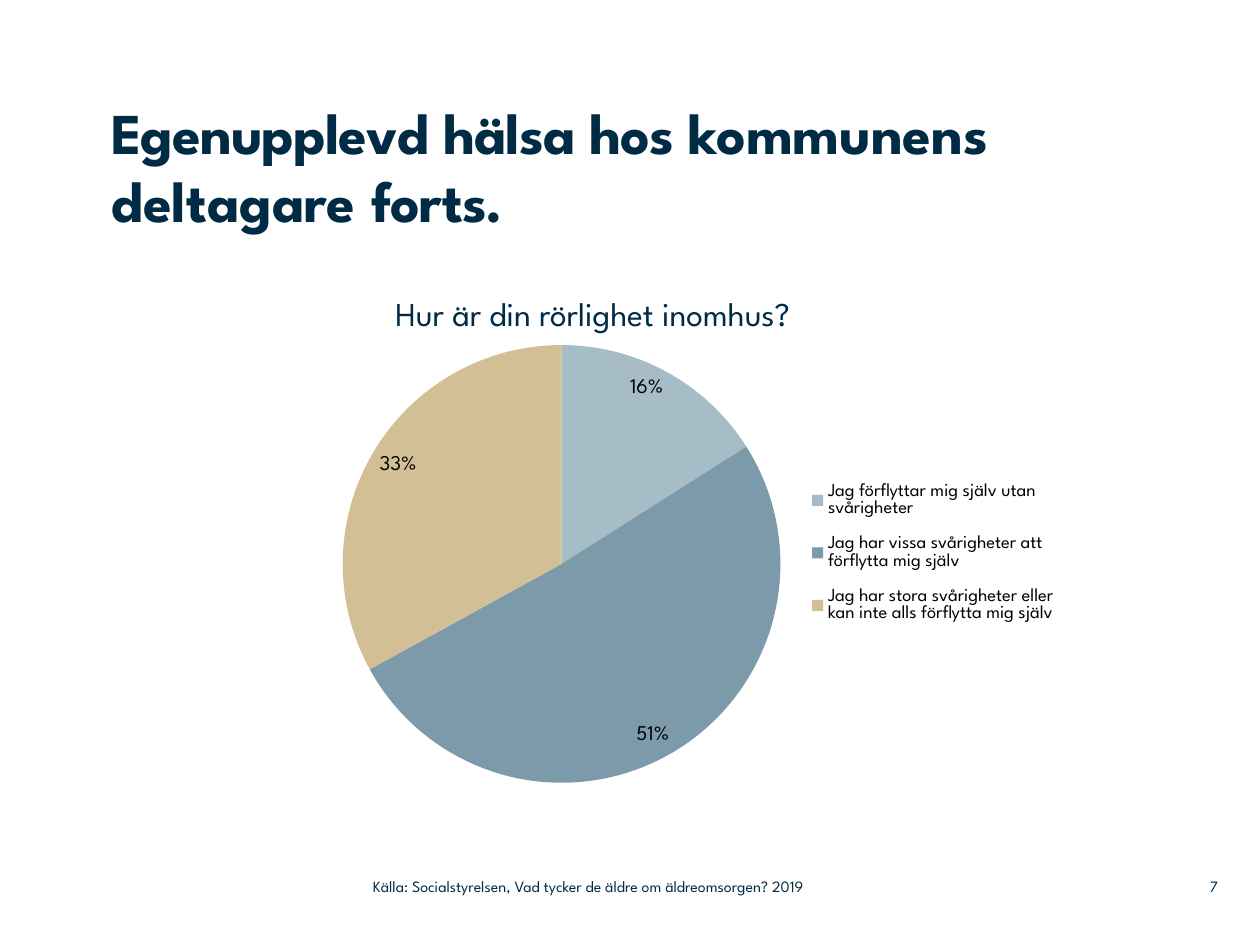
from dataclasses import dataclass

from lxml.etree import SubElement
from pptx import Presentation
from pptx.chart.data import CategoryChartData
from pptx.dml.color import RGBColor
from pptx.enum.chart import XL_CHART_TYPE, XL_LABEL_POSITION, XL_LEGEND_POSITION
from pptx.enum.text import MSO_ANCHOR, MSO_AUTO_SIZE, PP_ALIGN
from pptx.oxml.ns import qn
from pptx.util import Emu, Pt

FONT = "League Spartan"
NAVY = RGBColor(0x00, 0x2B, 0x45)
BLACK = RGBColor(0x00, 0x00, 0x00)
LIGHT_BLUE = RGBColor(0xA6, 0xBC, 0xC6)
STEEL_BLUE = RGBColor(0x7D, 0x9A, 0xAA)
SAND = RGBColor(0xD3, 0xBF, 0x96)


@dataclass(frozen=True)
class Box:
    left: int
    top: int
    width: int
    height: int

    def emu(self) -> tuple:
        return tuple(px(n) for n in (self.left, self.top, self.width, self.height))


@dataclass(frozen=True)
class Label:
    text: str
    box: Box
    size: int
    align: PP_ALIGN = PP_ALIGN.LEFT
    footer: bool = False


@dataclass(frozen=True)
class Slice:
    answer: str
    percent: int
    color: RGBColor


TITLE_BOX = Box(111, 94, 1010, 179)
TITLE_RUNS = [  # text and letter spacing in hundredths of a point
    ("Egenupplevd hälsa hos ", -50),
    ("kommunens deltagare ", 0),
    ("forts.", -50),
]
LABELS = [
    Label("Hur är din rörlighet inomhus?", Box(383, 287, 513, 53), 19),
    Label("7", Box(1159, 868, 59, 37), 9, PP_ALIGN.RIGHT, footer=True),
    Label("Källa: Socialstyrelsen, Vad tycker de äldre om äldreomsorgen? 2019",
          Box(373, 868, 558, 37), 9, footer=True),
]
CHART_BOX = Box(325, 314, 737, 500)
PIE_BOX = Box(343, 345, 438, 438)
LEGEND_BOX = Box(804, 465, 258, 176)
SLICES = [
    Slice("Jag förflyttar mig själv utan svårigheter", 16, LIGHT_BLUE),
    Slice("Jag har vissa svårigheter att förflytta mig själv", 51, STEEL_BLUE),
    Slice("Jag har stora svårigheter eller kan inte alls förflytta mig själv", 33, SAND),
]


def px(count: int) -> Emu:
    return Emu(round(count * 914400 / 126))


def style_font(font, size: float, color: RGBColor, bold: bool = False) -> None:
    font.name, font.size, font.bold = FONT, Pt(size), bold
    font.color.rgb = color


def clear_margins(frame) -> None:
    frame.margin_left = frame.margin_top = frame.margin_right = frame.margin_bottom = 0


def format_title(title) -> None:
    title.left, title.top, title.width, title.height = TITLE_BOX.emu()
    frame = title.text_frame
    clear_margins(frame)
    frame.margin_top = px(4)
    frame.word_wrap = True
    frame.auto_size = MSO_AUTO_SIZE.NONE
    frame.vertical_anchor = MSO_ANCHOR.TOP
    paragraph = frame.paragraphs[0]
    paragraph.alignment = PP_ALIGN.LEFT
    paragraph.line_spacing = Pt(39)
    paragraph.space_before = Pt(0)
    for text, spacing in TITLE_RUNS:
        run = paragraph.add_run()
        run.text = text
        style_font(run.font, 33, NAVY, bold=True)
        run._r.get_or_add_rPr().set("spc", str(spacing))


def add_label(slide, label: Label) -> None:
    frame = slide.shapes.add_textbox(*label.box.emu()).text_frame
    frame.word_wrap = True
    if label.footer:
        clear_margins(frame)
        frame.vertical_anchor = MSO_ANCHOR.MIDDLE
    else:
        frame.auto_size = MSO_AUTO_SIZE.SHAPE_TO_FIT_TEXT
    paragraph = frame.paragraphs[0]
    paragraph.alignment = label.align
    run = paragraph.add_run()
    run.text = label.text
    style_font(run.font, label.size, NAVY)


def place_in_chart(layout, box: Box, inner: bool = False) -> None:
    """Fix a chart part's place as fractions of the chart area."""
    for child in list(layout):
        layout.remove(child)
    manual = SubElement(layout, qn("c:manualLayout"))
    settings = [("layoutTarget", "inner")] if inner else []
    settings += [
        ("xMode", "edge"),
        ("yMode", "edge"),
        ("x", round((box.left - CHART_BOX.left) / CHART_BOX.width, 3)),
        ("y", round((box.top - CHART_BOX.top) / CHART_BOX.height, 3)),
        ("w", round(box.width / CHART_BOX.width, 3)),
        ("h", round(box.height / CHART_BOX.height, 3)),
    ]
    for name, value in settings:
        SubElement(manual, qn(f"c:{name}")).set("val", str(value))


def add_pie(slide) -> None:
    data = CategoryChartData()
    data.categories = [item.answer for item in SLICES]
    data.add_series("Series 1", [item.percent for item in SLICES])
    chart = slide.shapes.add_chart(XL_CHART_TYPE.PIE, *CHART_BOX.emu(), data).chart
    chart.has_title = False
    style_font(chart.font, 10, BLACK)

    # Slices and percentages
    plot = chart.plots[0]
    plot.vary_by_categories = True
    for index, item in enumerate(SLICES):
        fill = plot.series[0].points[index].format.fill
        fill.solid()
        fill.fore_color.rgb = item.color
    plot.has_data_labels = True
    labels = plot.data_labels
    labels.show_percentage, labels.show_value = True, False
    labels.number_format, labels.number_format_is_linked = "0%", False
    labels.position = XL_LABEL_POSITION.INSIDE_END
    style_font(labels.font, 12, BLACK)

    # Legend
    chart.has_legend = True
    legend = chart.legend
    legend.position = XL_LEGEND_POSITION.RIGHT
    legend.include_in_layout = False
    style_font(legend.font, 10.5, BLACK)

    # Manual places of pie and legend
    plot_area = chart._chartSpace.chart.plotArea
    layout = plot_area.find(qn("c:layout"))
    if layout is None:
        layout = SubElement(plot_area, qn("c:layout"))
        plot_area.insert(0, layout)
    place_in_chart(layout, PIE_BOX, inner=True)
    legend_layout = legend._element.find(qn("c:layout"))
    if legend_layout is None:
        legend_layout = SubElement(legend._element, qn("c:layout"))
        legend._element.find(qn("c:legendPos")).addnext(legend_layout)
    place_in_chart(legend_layout, LEGEND_BOX)


def main() -> None:
    presentation = Presentation()
    presentation.slide_width, presentation.slide_height = px(1260), px(945)
    slide = presentation.slides.add_slide(presentation.slide_layouts[5])
    format_title(slide.shapes.title)
    heading, *footers = LABELS
    add_label(slide, heading)
    add_pie(slide)
    for footer in footers:
        add_label(slide, footer)
    presentation.save("out.pptx")


if __name__ == "__main__":
    main()
